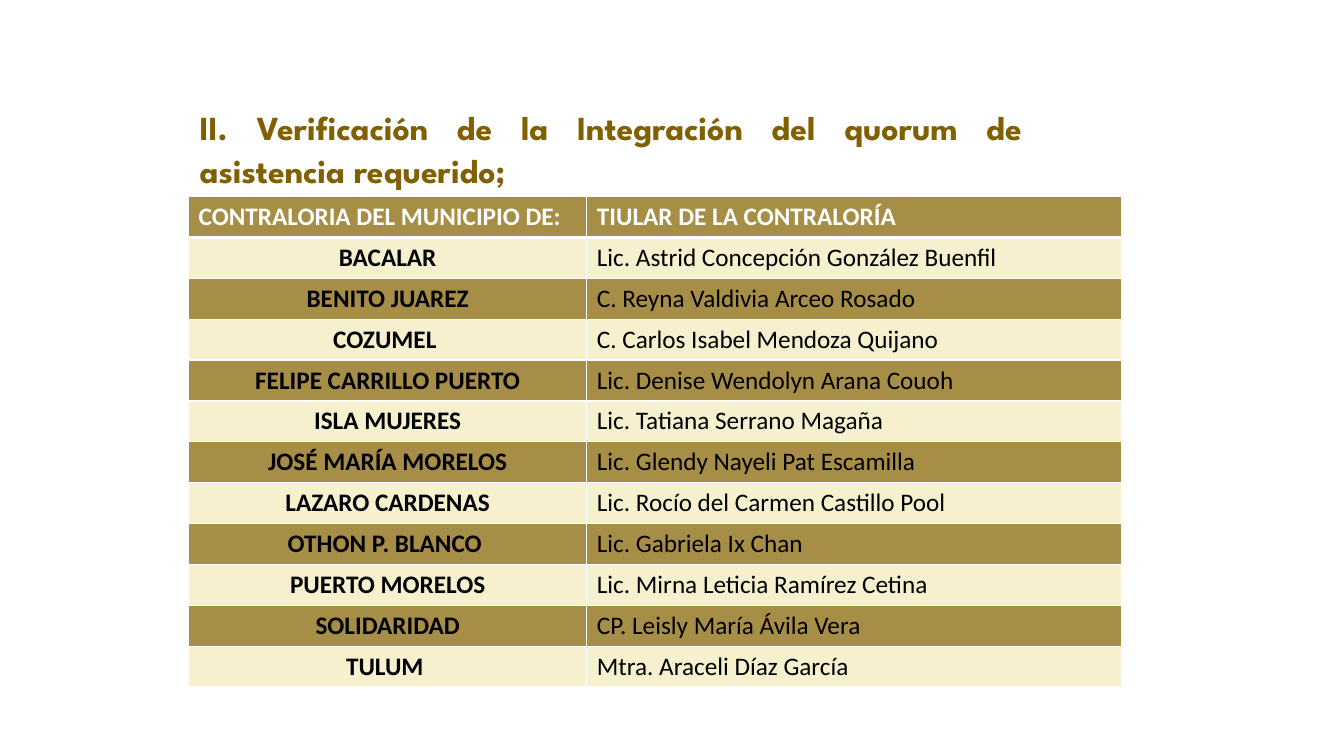
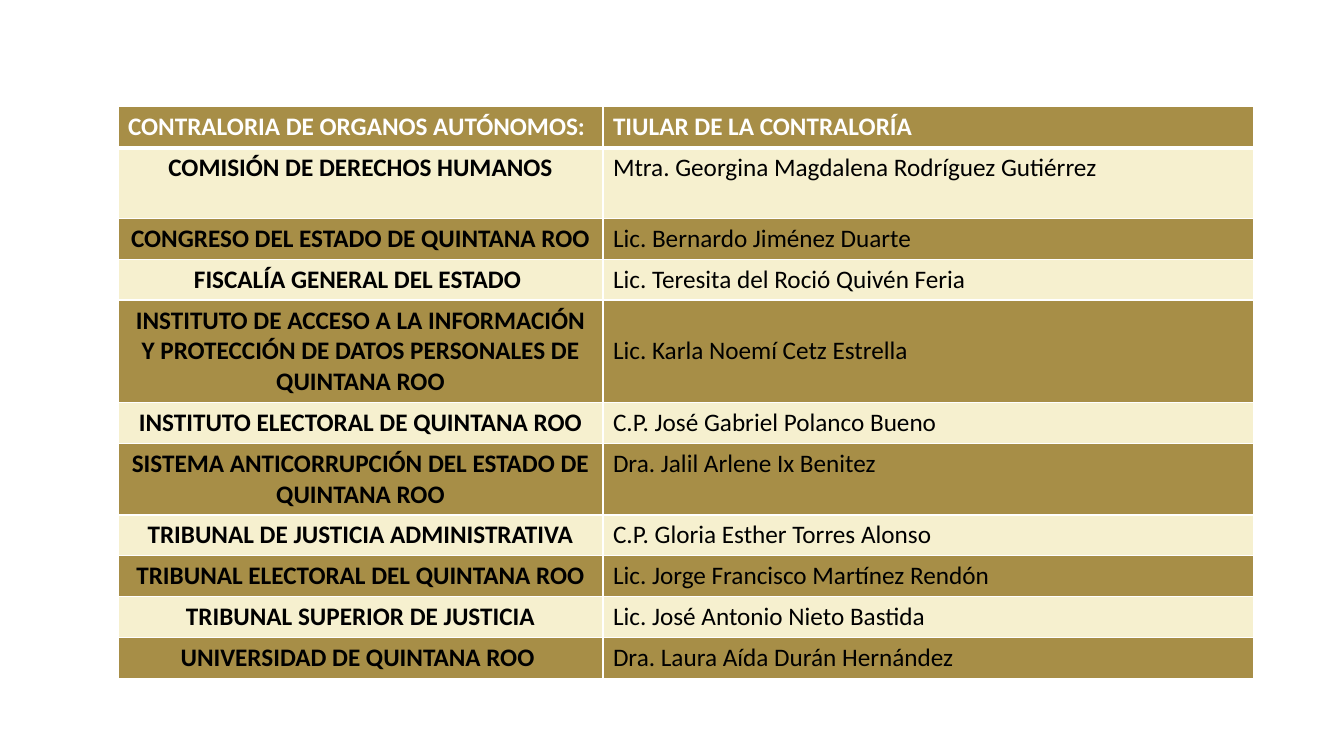
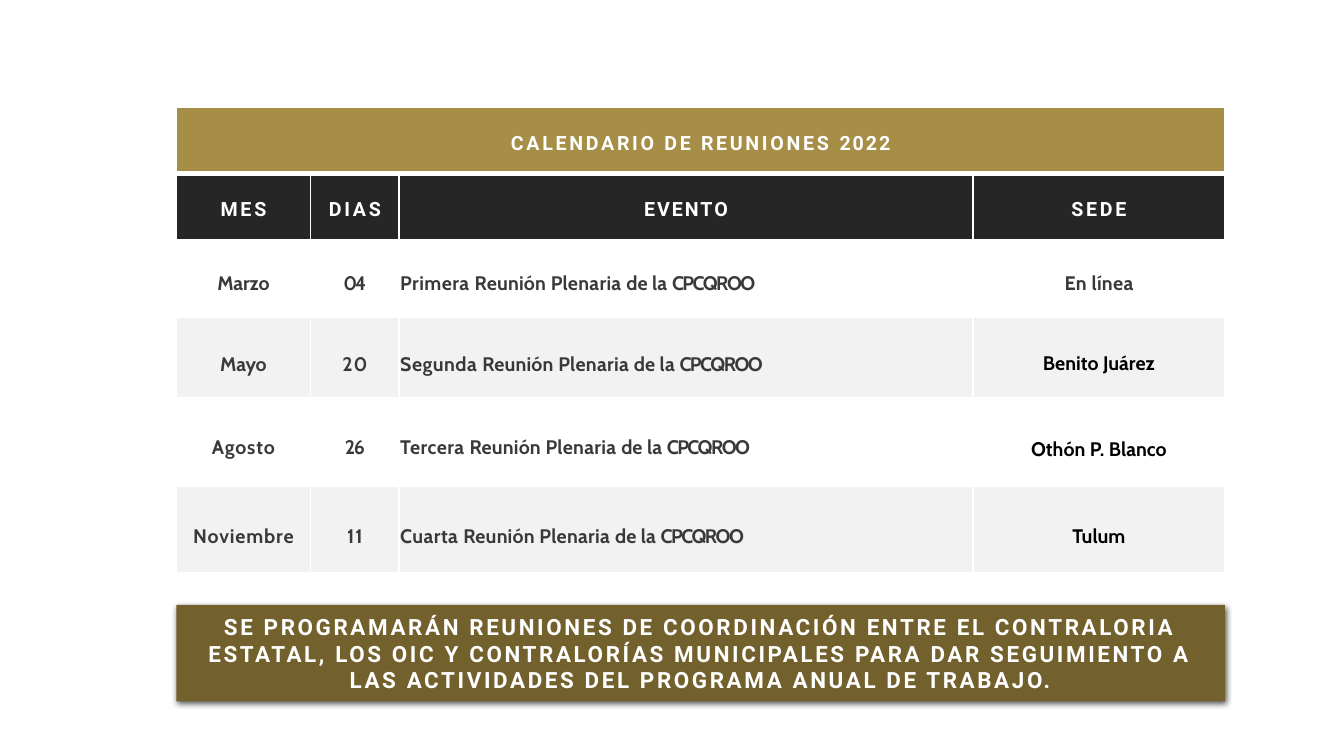
import pptx
import pptx.util
import pptx.dml.color
import pptx.enum.text
import pptx.enum.shapes
import pptx.oxml

PX = 9144
GOLD, CREAM, BROWN, DARK = "A78E47", "F6F0CF", "73612D", "262626"
GREY, INK, WHITE, BLACK = "F2F2F2", "3B3838", "FFFFFF", "000000"
NS = 'xmlns:a="http://schemas.openxmlformats.org/drawingml/2006/main"'
ALIGN = pptx.enum.text.PP_ALIGN
ANCHOR = pptx.enum.text.MSO_ANCHOR

TOWNS = [
    ("BACALAR", "Lic. Astrid Concepción González Buenfil"),
    ("BENITO JUAREZ", "C. Reyna Valdivia Arceo Rosado"),
    ("COZUMEL ", "C. Carlos Isabel Mendoza Quijano"),
    ("FELIPE CARRILLO PUERTO", "Lic. Denise Wendolyn Arana Couoh"),
    ("ISLA MUJERES", "Lic. Tatiana Serrano Magaña"),
    ("JOSÉ MARÍA MORELOS", "Lic. Glendy Nayeli Pat Escamilla"),
    ("LAZARO CARDENAS", "Lic. Rocío del Carmen Castillo Pool"),
    ("OTHON P. BLANCO ", "Lic. Gabriela Ix Chan"),
    ("PUERTO MORELOS", "Lic. Mirna Leticia Ramírez Cetina"),
    ("SOLIDARIDAD", "CP. Leisly María Ávila Vera"),
    ("TULUM ", "Mtra. Araceli Díaz García"),
]
BODIES = [
    ("COMISIÓN DE DERECHOS HUMANOS", "Mtra. Georgina Magdalena Rodríguez Gutiérrez"),
    ("CONGRESO DEL ESTADO DE QUINTANA ROO", "Lic. Bernardo Jiménez Duarte"),
    ("FISCALÍA GENERAL DEL ESTADO ", "Lic. Teresita del Roció Quivén Feria"),
    ("INSTITUTO DE ACCESO A LA INFORMACIÓN Y PROTECCIÓN DE DATOS PERSONALES DE QUINTANA ROO",
     "Lic. Karla Noemí Cetz Estrella"),
    ("INSTITUTO ELECTORAL DE QUINTANA ROO", "C.P. José Gabriel Polanco Bueno"),
    ("SISTEMA ANTICORRUPCIÓN DEL ESTADO DE QUINTANA ROO", "Dra. Jalil Arlene Ix Benitez"),
    ("TRIBUNAL DE JUSTICIA ADMINISTRATIVA", "C.P. Gloria Esther Torres Alonso"),
    ("TRIBUNAL ELECTORAL DEL QUINTANA ROO", "Lic. Jorge Francisco Martínez Rendón"),
    ("TRIBUNAL SUPERIOR DE JUSTICIA", "Lic. José Antonio Nieto Bastida"),
    ("UNIVERSIDAD DE QUINTANA ROO ", "Dra. Laura Aída Durán Hernández"),
]
HEADS = [("MES", 2), ("DIAS", 1.9), ("EVENTO", 1.4), ("SEDE", 1.9)]
DATES = [
    (("Marzo", -0.1), ("04", -1.6), "Primera ", ("En línea", 0.2), INK, (10, 10, 10)),
    (("Mayo", -0.1), ("20", 0.7), "Segunda ", ("Benito Juárez", 0), BLACK, (14, 14, 11)),
    (("Agosto", 0.6), ("26", -0.9), "Tercera ", ("Othón P. Blanco", 0), BLACK, (11, 11, 14)),
    (("Noviembre", 0.6), ("11", 0.6), "Cuarta ", ("Tulum", 0), BLACK, (14, 14, 14)),
]
EVENT = [("Reunión ", 0.1), ("Plenaria ", 0.2), ("de ", 0), ("la ", 0.1), ("CPCQROO", -1.1)]
NOTE = ("SE PROGRAMARÁN REUNIONES DE COORDINACIÓN ENTRE EL CONTRALORIA ESTATAL, "
        "LOS OIC Y CONTRALORÍAS MUNICIPALES PARA DAR SEGUIMIENTO A LAS ACTIVIDADES "
        "DEL PROGRAMA ANUAL DE TRABAJO.")


def px(*nums):
    return [pptx.util.Emu(n * PX) for n in nums]


def tone(code):
    return pptx.dml.color.RGBColor.from_string(code)


def paint(part, code):
    if code:
        part.fill.solid()
        part.fill.fore_color.rgb = tone(code)
    else:
        part.fill.background()


def write(frame, runs, face, size, code, bold=True, align=ALIGN.CENTER):
    para = frame.paragraphs[0]
    para.alignment = align
    font = para.font
    font.name, font.size, font.bold = face, pptx.util.Pt(size), bold
    font.color.rgb = tone(code)
    for text, gap in runs:
        run = para.add_run()
        run.text = text
        if gap:
            run._r.get_or_add_rPr().set("spc", str(round(gap * 100)))
    return para


def edge(cell, side, top, low):
    props = cell._tc.get_or_add_tcPr()
    for spot, (name, width) in enumerate(zip("LRTB", (side, side, top, low))):
        props.insert(spot, pptx.oxml.parse_xml(
            f'<a:ln{name} {NS} w="{pptx.util.Pt(width)}"><a:solidFill>'
            f'<a:srgbClr val="{WHITE}"/></a:solidFill></a:ln{name}>'))


def grid(slide, left, top, cols, rows):
    table = slide.shapes.add_table(
        len(rows), len(cols), *px(left, top, sum(cols), sum(rows))).table
    for col, width in zip(table.columns, px(*cols)):
        col.width = width
    for row, height in zip(table.rows, px(*rows)):
        row.height = height
    return table


def roster(slide, left, top, cols, head, people, tall):
    rows = [tall.get(num, 40) for num in range(len(people) + 1)]
    table = grid(slide, left, top, cols, rows)
    for num, pair in enumerate([(head, "TIULAR DE LA CONTRALORÍA")] + people):
        for col, text in enumerate(pair):
            cell = table.cell(num, col)
            paint(cell, CREAM if num % 2 else GOLD)
            edge(cell, 1, 3 if num == 1 else 1, 1 if num else 3)
            write(cell.text_frame, [(text, 0)], "Calibri", 18,
                  BLACK if num else WHITE, not num or not col,
                  ALIGN.CENTER if num and not col else ALIGN.LEFT)
            if rows[num] == 100 and col:
                cell.vertical_anchor = ANCHOR.MIDDLE


def slot(cell, runs, face, code, fill, inset, top=1.5, low=1.5, align=ALIGN.CENTER):
    paint(cell, fill)
    edge(cell, 1.5, top, low)
    cell.vertical_anchor = ANCHOR.MIDDLE
    cell.margin_left, cell.margin_top, cell.margin_right, cell.margin_bottom = px(
        1 if align == ALIGN.LEFT else 0, inset, 0, 0)
    write(cell.text_frame, runs, face, 14, code, align=align)


def agenda(slide, left, top):
    table = grid(slide, left, top, (133, 88, 569, 250), (66, 66, 77, 80, 87, 87))
    table.cell(0, 0).merge(table.cell(0, 3))
    slot(table.cell(0, 0), [("CALENDARIO DE REUNIONES ", 1.9), ("2022", 1.4)],
         "Roboto", WHITE, GOLD, 7, low=4.25)
    for col, head in enumerate(HEADS):
        slot(table.cell(1, col), [head], "Roboto", WHITE, DARK, 7, top=4.25)
    for num, (month, day, rank, place, code, insets) in enumerate(DATES):
        fill = GREY if num % 2 else None
        parts = [[month], [day], [(rank, 0.3)] + EVENT, [place]]
        for col, runs in enumerate(parts):
            slot(table.cell(num + 2, col), runs, "Cabin", code if col == 3 else INK,
                 fill, insets[max(col - 1, 0)],
                 align=ALIGN.LEFT if col == 2 else ALIGN.CENTER)


def banner(slide, *box):
    bar = slide.shapes.add_shape(pptx.enum.shapes.MSO_SHAPE.RECTANGLE, *px(*box))
    paint(bar, BROWN)
    bar.line.fill.background()
    bar.shadow.inherit = False
    bar._element.spPr.find(pptx.oxml.ns.qn("a:effectLst")).append(pptx.oxml.parse_xml(
        f'<a:outerShdw {NS} blurRad="57150" dist="19050" dir="5400000" algn="ctr" '
        f'rotWithShape="0"><a:srgbClr val="{BLACK}"><a:alpha val="63000"/></a:srgbClr>'
        '</a:outerShdw>'))
    bar.text_frame.word_wrap = True
    bar.text_frame.vertical_anchor = ANCHOR.MIDDLE
    write(bar.text_frame, [(NOTE, 1.9)], "Roboto", 16, WHITE)


def title(slide, text, *box):
    head = slide.shapes.title
    head.left, head.top, head.width, head.height = px(*box)
    frame = head.text_frame
    frame.word_wrap = True
    frame.auto_size = pptx.enum.text.MSO_AUTO_SIZE.NONE
    frame.vertical_anchor = ANCHOR.TOP
    para = write(frame, [(text, 0)], "League Spartan", 24, "806000", align=ALIGN.JUSTIFY)
    para.line_spacing = 1.07


def main():
    deck = pptx.Presentation()
    deck.slide_width, deck.slide_height = px(1333, 750)
    first, second, third = [
        deck.slides.add_slide(deck.slide_layouts[kind]) for kind in (5, 6, 6)]
    title(first, "II. Verificación de la Integración del quorum de asistencia requerido;",
          188, 98, 836, 97)
    roster(first, 187, 195, (395, 530), "CONTRALORIA DEL MUNICIPIO DE:", TOWNS, {})
    roster(second, 117, 106, (481, 645), "CONTRALORIA DE ORGANOS AUTÓNOMOS:", BODIES,
           {1: 70, 4: 100, 6: 70})
    agenda(third, 175, 106)
    banner(third, 175, 600, 1040, 96)
    deck.save("out.pptx")


if __name__ == "__main__":
    main()
